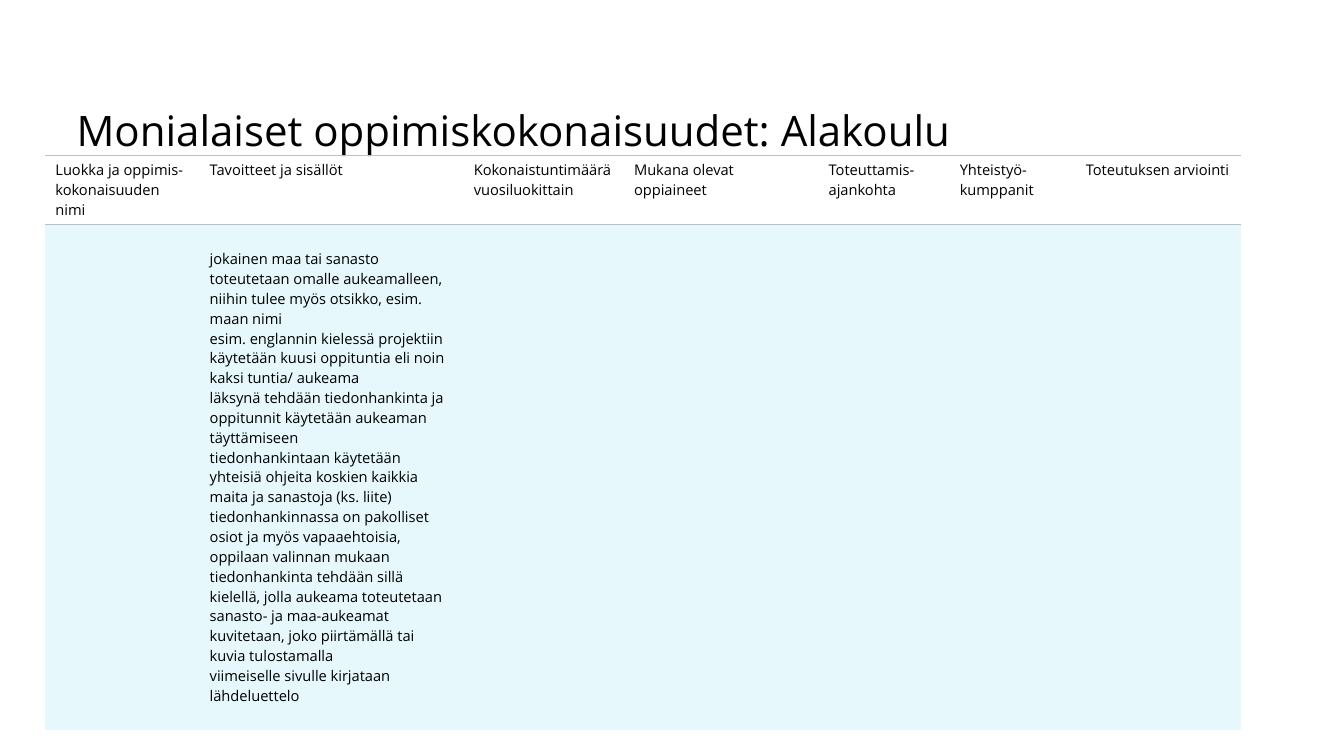
from lxml import etree
from pptx import Presentation
from pptx.dml.color import RGBColor
from pptx.enum.text import MSO_ANCHOR, MSO_AUTO_SIZE
from pptx.oxml.ns import qn
from pptx.util import Inches, Pt

BOTTOM = MSO_ANCHOR.BOTTOM
NO_AUTOFIT = MSO_AUTO_SIZE.NONE
TITLE_ONLY = 5
PLAIN_TABLE = "{2D5ABB26-0587-4C30-8999-92F81FD0307C}"
COLORS = {"text": "000000", "band": "E6F8FC", "rule": "BFBFBF"}

HEADINGS = [
    "Luokka ja oppimis-kokonaisuuden nimi",
    "Tavoitteet ja sisällöt",
    "Kokonaistuntimäärä vuosiluokittain",
    "Mukana olevat oppiaineet",
    "Toteuttamis-ajankohta",
    "Yhteistyö-kumppanit",
    "Toteutuksen arviointi",
]
GOALS = [
    "jokainen maa tai sanasto toteutetaan omalle aukeamalleen, niihin tulee myös otsikko, esim. maan nimi",
    "esim. englannin kielessä projektiin käytetään kuusi oppituntia eli noin kaksi tuntia/ aukeama",
    "läksynä tehdään tiedonhankinta ja oppitunnit käytetään aukeaman täyttämiseen",
    "tiedonhankintaan käytetään yhteisiä ohjeita koskien kaikkia maita ja sanastoja (ks. liite)",
    "tiedonhankinnassa on pakolliset osiot ja myös vapaaehtoisia, oppilaan valinnan mukaan",
    "tiedonhankinta tehdään sillä kielellä, jolla aukeama toteutetaan",
    "sanasto- ja maa-aukeamat kuvitetaan, joko piirtämällä tai kuvia tulostamalla",
    "viimeiselle sivulle kirjataan lähdeluettelo",
]
COLUMN_WIDTHS = [1.53, 2.62, 1.59, 1.93, 1.3, 1.25, 1.64]
ROW_HEIGHTS = [0.53, 4.5, 0.25, 0.25, 0.28]


class CurriculumSlide:
    font_name = "Open Sans"
    title_size = 30
    table_size = 10.5

    def __init__(self, presentation):
        self.slide = presentation.slides.add_slide(presentation.slide_layouts[TITLE_ONLY])

    def style(self, paragraph, size):
        paragraph.font.name = self.font_name
        paragraph.font.size = Pt(size)
        paragraph.font.color.rgb = RGBColor.from_string(COLORS["text"])

    def title(self, text, left, top, width, height):
        heading = self.slide.shapes.title
        heading.left, heading.top = Inches(left), Inches(top)
        heading.width, heading.height = Inches(width), Inches(height)
        frame = heading.text_frame
        frame.text = text
        frame.word_wrap = True
        frame.auto_size = NO_AUTOFIT
        frame.vertical_anchor = BOTTOM
        frame.margin_left = frame.margin_right = 0
        frame.margin_top = frame.margin_bottom = 0
        paragraph = frame.paragraphs[0]
        paragraph.line_spacing = 0.9
        paragraph.alignment = 1
        self.style(paragraph, self.title_size)

    def rule(self, cell, side):
        line = etree.SubElement(cell._tc.get_or_add_tcPr(), qn(f"a:{side}"), w=str(Pt(1)))
        fill = etree.SubElement(line, qn("a:solidFill"))
        etree.SubElement(fill, qn("a:srgbClr"), val=COLORS["rule"])

    def cell(self, cell, lines, banded, ruled_sides):
        cell.text = "\n".join(lines)
        for paragraph in cell.text_frame.paragraphs:
            self.style(paragraph, self.table_size)
        for side in ruled_sides:
            self.rule(cell, side)
        if banded:
            cell.fill.solid()
            cell.fill.fore_color.rgb = RGBColor.from_string(COLORS["band"])
        else:
            cell.fill.background()

    def table(self, contents, left, top, widths, heights):
        frame = self.slide.shapes.add_table(
            len(heights), len(widths), Inches(left), Inches(top),
            Inches(sum(widths)), Inches(sum(heights)))
        table = frame.table
        table.first_row = table.horz_banding = False
        table._tbl.tblPr.find(qn("a:tableStyleId")).text = PLAIN_TABLE
        for column, width in zip(table.columns, widths):
            column.width = Inches(width)
        # Odd rows are tinted; rules frame the header and close the table
        ruled = {0: ("lnT", "lnB"), len(heights) - 1: ("lnB",)}
        for row, height in enumerate(heights):
            table.rows[row].height = Inches(height)
            for column in range(len(widths)):
                self.cell(table.cell(row, column), contents.get((row, column), []),
                          row % 2 == 1, ruled.get(row, ()))
        return table


def main():
    presentation = Presentation()
    presentation.slide_width = Inches(13.33)
    presentation.slide_height = Inches(7.5)
    page = CurriculumSlide(presentation)

    # Title
    page.title("Monialaiset oppimiskokonaisuudet: Alakoulu", 0.76, 0.6, 10.25, 0.94)

    # Planning table
    contents = {(0, column): [heading] for column, heading in enumerate(HEADINGS)}
    contents[1, 1] = GOALS
    plan = page.table(contents, 0.45, 1.54, COLUMN_WIDTHS, ROW_HEIGHTS)
    goals = plan.cell(1, 1)
    goals.margin_top = goals.margin_bottom = Inches(0.24)

    presentation.save("out.pptx")


if __name__ == "__main__":
    main()
